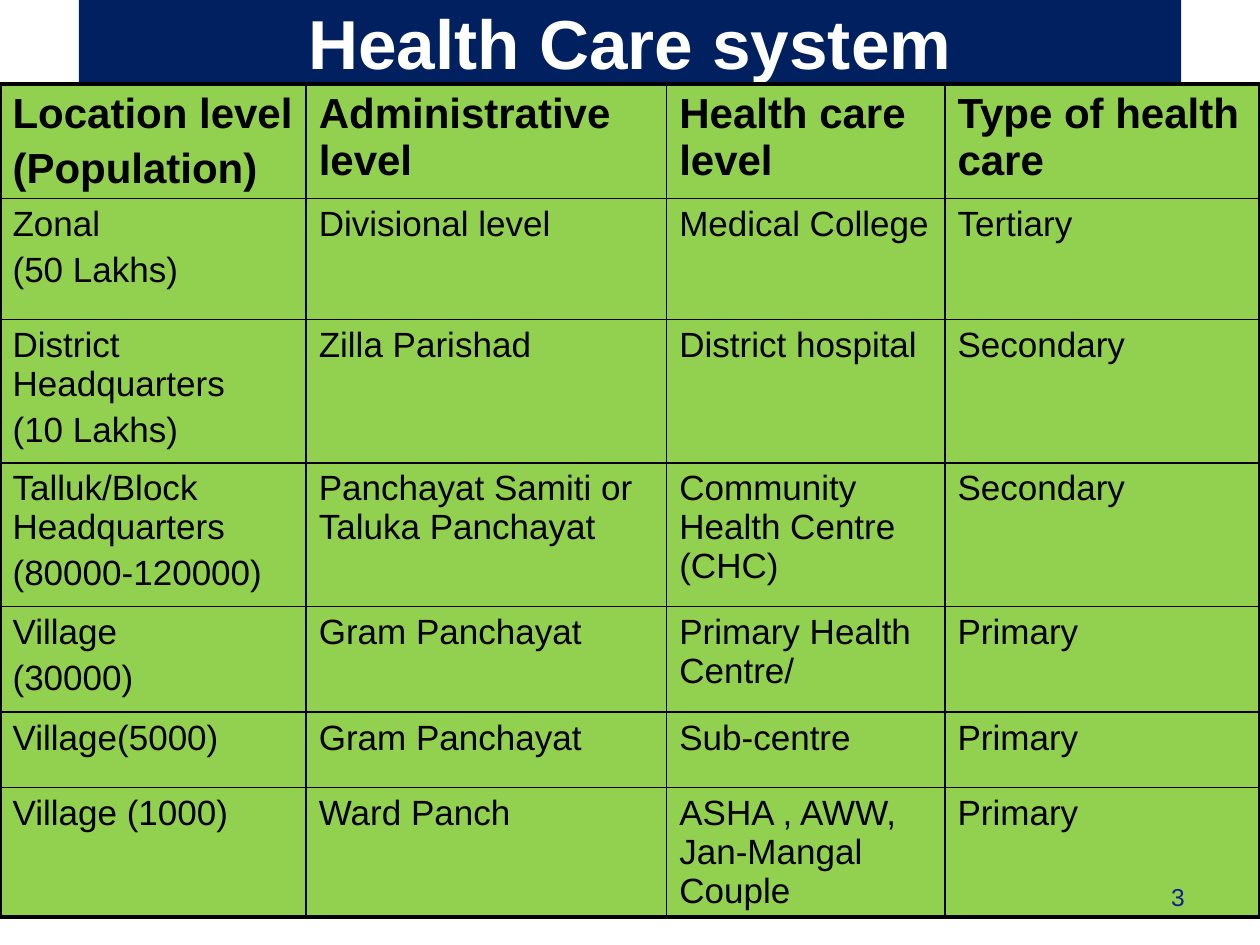
from dataclasses import dataclass

import pptx
import pptx.dml.color
import pptx.enum.text
import pptx.oxml.ns
import pptx.util
from lxml import etree

Pt = pptx.util.Pt
COLORS = {"navy": "002060", "green": "92D050", "black": "000000",
          "white": "FFFFFF", "number": "151E8F"}
FONT = "Arial"
THIN, THICK = 1, 2.25


@dataclass
class Row:
    height: float
    cells: tuple[str, str, str, str]  # a line feed starts a new paragraph
    size: float = 20
    bold: bool = False


COLUMN_WIDTHS = [175, 206, 159, 180]
ROWS = [
    Row(59, ("Location level\n(Population)", "Administrative level",
             "Health care level", "Type of health care"), 24, True),
    Row(69, ("Zonal\n(50 Lakhs)", "Divisional level", "Medical College", "Tertiary")),
    Row(82, ("District Headquarters\n(10 Lakhs)", "Zilla Parishad",
             "District hospital", "Secondary")),
    Row(82, ("Talluk/Block Headquarters\n(80000-120000)",
             "Panchayat Samiti or Taluka Panchayat",
             "Community Health Centre (CHC)", "Secondary")),
    Row(60.5, ("Village\n(30000)", "Gram Panchayat", "Primary Health Centre/", "Primary")),
    Row(43, ("Village(5000)", "Gram Panchayat", "Sub-centre", "Primary")),
    Row(60.5, ("Village (1000)", "Ward Panch", "ASHA , AWW, Jan-Mangal Couple", "Primary")),
]


def rgb(name: str) -> pptx.dml.color.RGBColor:
    return pptx.dml.color.RGBColor.from_string(COLORS[name])


def add_run(p, text: str, size: float, color: str, bold: bool = False) -> None:
    r = p.add_run()
    r.text = text
    r.font.name, r.font.size, r.font.bold = FONT, Pt(size), bold
    r.font.color.rgb = rgb(color)


def set_borders(cell, widths: dict[str, float]) -> None:
    qn = pptx.oxml.ns.qn
    tc_pr = cell._tc.get_or_add_tcPr()
    for side, width in widths.items():
        ln = etree.SubElement(tc_pr, qn(f"a:ln{side}"), w=str(Pt(width)))
        fill = etree.SubElement(ln, qn("a:solidFill"))
        etree.SubElement(fill, qn("a:srgbClr"), val=COLORS["black"])


def fill_cell(cell, text: str, row: Row) -> None:
    cell.fill.solid()
    cell.fill.fore_color.rgb = rgb("green")
    tf = cell.text_frame
    for i, line in enumerate(text.split("\n")):
        p = tf.add_paragraph() if i else tf.paragraphs[0]
        p.space_before = Pt(0.2 * row.size if i else 0)
        add_run(p, line, row.size, "black", row.bold)


def add_title(s) -> None:
    sp = s.shapes.title
    sp.left, sp.top, sp.width, sp.height = Pt(45), Pt(0), Pt(630), Pt(48)
    sp.fill.solid()
    sp.fill.fore_color.rgb = rgb("navy")
    tf = sp.text_frame
    tf.auto_size = pptx.enum.text.MSO_AUTO_SIZE.NONE
    tf.vertical_anchor = pptx.enum.text.MSO_ANCHOR.MIDDLE
    p = tf.paragraphs[0]
    p.alignment = pptx.enum.text.PP_ALIGN.CENTER
    add_run(p, "Health Care system", 39.6, "white", True)


def add_levels_table(s) -> None:
    last_row, last_col = len(ROWS) - 1, len(COLUMN_WIDTHS) - 1
    table = s.shapes.add_table(
        len(ROWS), len(COLUMN_WIDTHS), Pt(0), Pt(48),
        Pt(sum(COLUMN_WIDTHS)), Pt(sum(row.height for row in ROWS))).table
    table.first_row = table.horz_banding = False
    for column, width in zip(table.columns, COLUMN_WIDTHS):
        column.width = Pt(width)
    for i, row in enumerate(ROWS):
        table.rows[i].height = Pt(row.height)
        for j, text in enumerate(row.cells):
            cell = table.cell(i, j)
            # Outer edges are thick, inner lines thin
            outer = {"L": j == 0, "R": j == last_col, "T": i == 0, "B": i == last_row}
            set_borders(cell, {side: THICK if edge else THIN for side, edge in outer.items()})
            fill_cell(cell, text, row)


def add_page_number(s) -> None:
    tf = s.shapes.add_textbox(Pt(516), Pt(500.5), Pt(168), Pt(29)).text_frame
    tf.word_wrap = True
    p = tf.paragraphs[0]
    p.alignment = pptx.enum.text.PP_ALIGN.RIGHT
    add_run(p, "3", 14, "number")


def main() -> None:
    prs = pptx.Presentation()
    prs.slide_width, prs.slide_height = Pt(720), Pt(540)
    s = prs.slides.add_slide(prs.slide_layouts[5])  # Title Only
    add_title(s)
    add_levels_table(s)
    add_page_number(s)
    prs.save("out.pptx")


if __name__ == "__main__":
    main()
